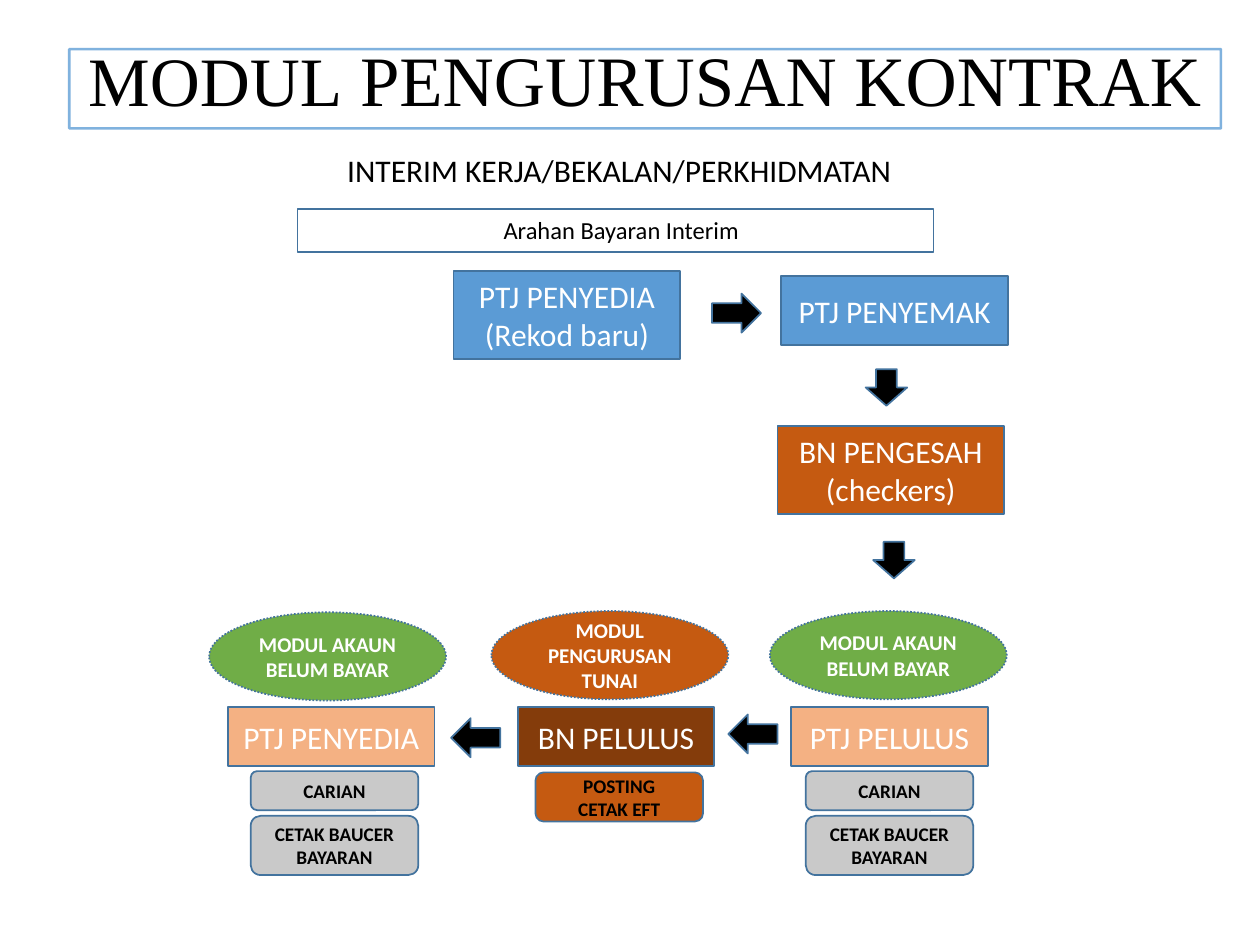
from pptx import Presentation
from pptx.util import Inches, Pt
from pptx.dml.color import RGBColor
from pptx.enum.dml import MSO_LINE
from pptx.enum.shapes import MSO_SHAPE
from pptx.enum.text import MSO_ANCHOR, PP_ALIGN
from lxml.etree import SubElement

THEME = dict(
    blue="5B9BD5", edge="43739E", orange="C55A11", brown="843C0B", peach="F4B183",
    green="70AD47", grey="C9C9C9", black="000000", white="FFFFFF",
    body="Calibri", heading="Times New Roman",
    title=40.5, title_first=39.6, box=18, note=14, oval=12, pill=11,
)
RECT, OVAL, PILL = MSO_SHAPE.RECTANGLE, MSO_SHAPE.OVAL, MSO_SHAPE.ROUNDED_RECTANGLE

prs = Presentation()
prs.slide_width, prs.slide_height = Inches(10), Inches(7.5)
COL, ROW = prs.slide_width / 100, prs.slide_height / 75
s = prs.slides.add_slide(prs.slide_layouts[6])


def write(tf, text, size="box", color="white", bold=False, font="body", anchor=MSO_ANCHOR.MIDDLE):
    tf.word_wrap = True
    tf.vertical_anchor = anchor
    for i, line in enumerate(text.split("\n")):
        p = tf.paragraphs[0] if i == 0 else tf.add_paragraph()
        p.alignment = PP_ALIGN.CENTER
        r = p.add_run()
        r.text = line
        r.font.name = THEME[font]
        r.font.size = Pt(THEME[size])
        r.font.bold = bold
        r.font.color.rgb = RGBColor.from_string(THEME[color])


def shape(kind, x, y, w, h, text="", fill=None, line="edge", width=1, rot=0, **fmt):
    sp = s.shapes.add_shape(kind, int(x * COL), int(y * ROW), int(w * COL), int(h * ROW))
    sp.shadow.inherit = False
    sp.rotation = rot
    if fill:
        sp.fill.solid()
        sp.fill.fore_color.rgb = RGBColor.from_string(THEME[fill])
    else:
        sp.fill.background()
    sp.line.color.rgb = RGBColor.from_string(THEME[line])
    sp.line.width = Pt(width)
    if kind == OVAL:
        sp.line.dash_style = MSO_LINE.ROUND_DOT
    if text:
        write(sp.text_frame, text, **fmt)
    return sp


title = shape(RECT, 5.5, 3.9, 91.4, 6.3, "MODUL", line="blue", width=1.5,
              size="title_first", color="black", font="heading", anchor=MSO_ANCHOR.BOTTOM)
p = title.text_frame.paragraphs[0]
p.line_spacing = 0.9
r = p.add_run()
r.text = " PENGURUSAN KONTRAK"
r.font.name = THEME["heading"]
r.font.size = Pt(THEME["title"])
r.font.color.rgb = RGBColor.from_string(THEME["black"])
clr = title.line._ln.find(".//{*}srgbClr")
SubElement(clr, clr.tag.replace("srgbClr", "alpha"), val="76000")

tb = s.shapes.add_textbox(int(23.9 * COL), int(11.5 * ROW), int(50.5 * COL), int(4 * ROW))
write(tb.text_frame, "INTERIM KERJA/BEKALAN/PERKHIDMATAN", color="black", anchor=MSO_ANCHOR.TOP)

note = shape(RECT, 23.6, 16.6, 50.5, 3.4, "Arahan Bayaran Interim", width=0.75,
             size="note", color="black", anchor=MSO_ANCHOR.TOP)
note.text_frame.margin_left = int(1.9 * COL)

for x, y, h, fill, text in [
    (36, 21.5, 7, "blue", "PTJ PENYEDIA\n(Rekod baru)"),
    (62, 21.9, 5.5, "blue", "PTJ PENYEMAK"),
    (61.7, 33.8, 7, "orange", "BN PENGESAH\n(checkers)"),
]:
    shape(RECT, x, y, 18, h, text, fill)

AKAUN = ("MODUL AKAUN BELUM BAYAR", "green")
TUNAI = ("MODUL PENGURUSAN TUNAI", "orange")
CARIAN = ("CARIAN", "grey", 61.2, 3.1)
CETAK = ("CETAK BAUCER BAYARAN", "grey", 64.75, 4.7)
EFT = ("POSTING\nCETAK EFT", "orange", 61.3, 3.9)
for oval_x, oval_y, module, box_x, box_w, box, fill, pill_x, pills in [
    (16.6, 48.6, AKAUN, 18.1, 16.4, "PTJ PENYEDIA", "peach", 19.9, [CARIAN, CETAK]),
    (39, 48.5, TUNAI, 41.1, 15.6, "BN PELULUS", "brown", 42.5, [EFT]),
    (61.1, 48.5, AKAUN, 62.8, 15.6, "PTJ PELULUS", "peach", 63.95, [CARIAN, CETAK]),
]:
    shape(OVAL, oval_x, oval_y, 18.8, 7, *module, size="oval", bold=True)
    shape(RECT, box_x, 56.1, box_w, 4.7, box, fill)
    for text, pill_fill, y, h in pills:
        shape(PILL, pill_x, y, 13.3, h, text, pill_fill, size="pill", color="black", bold=True)

for x, y, w, h, rot in [
    (56.5, 23.3, 3.9, 3.1, 0),
    (68.9, 29.1, 2.9, 3.3, 90),
    (69.5, 42.8, 2.9, 3.3, 90),
    (57.8, 56.7, 3.9, 3.1, 180),
    (35.8, 57, 3.9, 3.1, 180),
]:
    shape(MSO_SHAPE.RIGHT_ARROW, x, y, w, h, fill="black", rot=rot)

prs.save("out.pptx")
